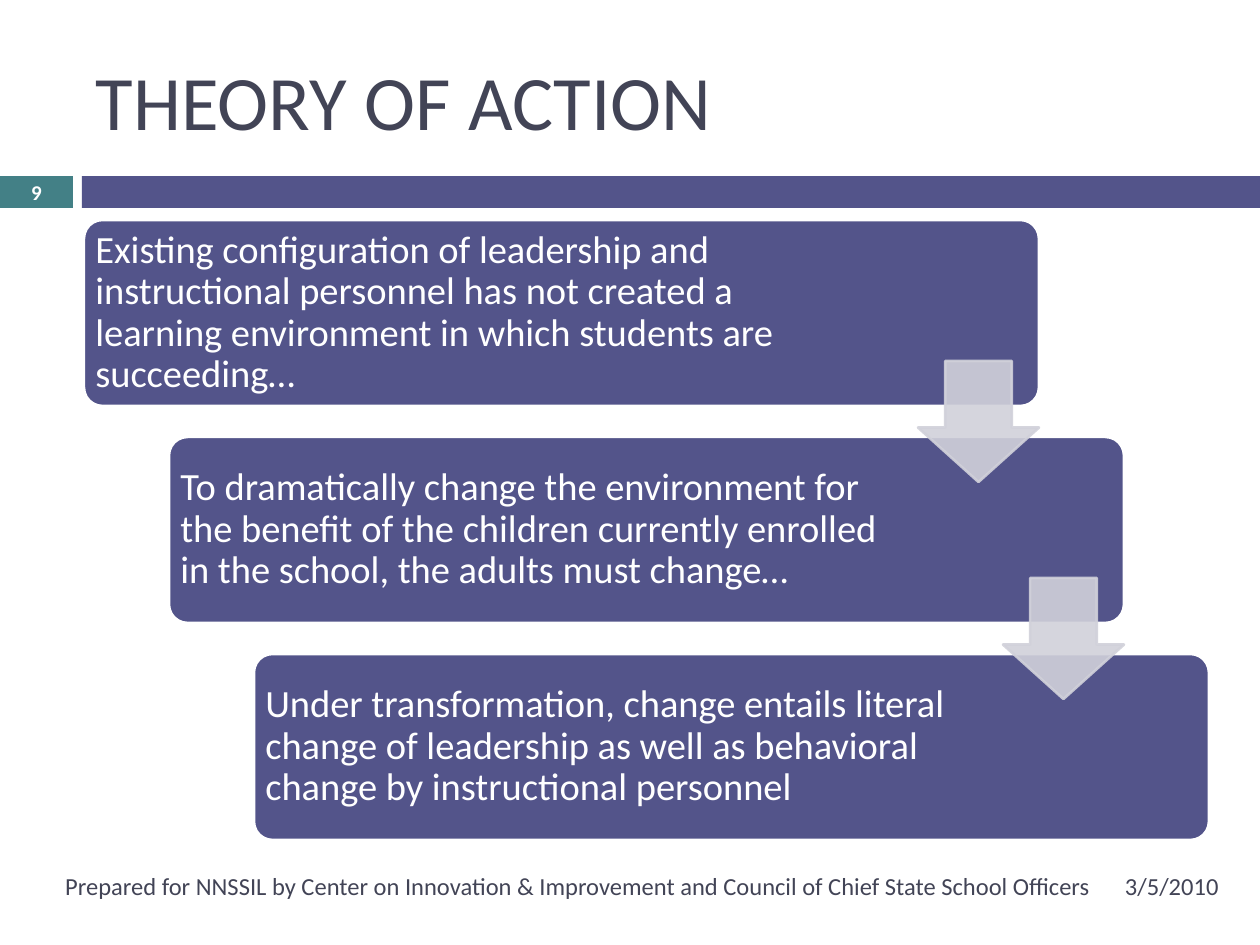
from dataclasses import dataclass

from lxml.etree import SubElement
from pptx import Presentation
from pptx.dml.color import RGBColor
from pptx.enum.shapes import MSO_SHAPE
from pptx.enum.text import MSO_ANCHOR, PP_ALIGN
from pptx.oxml.ns import qn
from pptx.util import Pt


@dataclass(frozen=True)
class Theme:
    font: str = "Calibri"
    ink: str = "424456"
    indigo: str = "53548A"
    teal: str = "438086"
    arrow: str = "D1D1DA"
    white: str = "FFFFFF"
    title_size: float = 44
    step_size: float = 22
    footer_size: float = 14
    number_size: float = 12


THEME = Theme()
EMU_PER_PX = 914400 / 126


def px(*lengths):
    return [round(length * EMU_PER_PX) for length in lengths]


def write(shape, text, size, color, align=PP_ALIGN.LEFT, bold=False, insets=(12, 6, 12, 6)):
    frame = shape.text_frame
    frame.word_wrap = True
    frame.vertical_anchor = MSO_ANCHOR.MIDDLE
    frame.margin_left, frame.margin_top, frame.margin_right, frame.margin_bottom = px(*insets)
    paragraph = frame.paragraphs[0]
    paragraph.alignment = align
    run = paragraph.add_run()
    run.text = text
    run.font.name = THEME.font
    run.font.size = Pt(size)
    run.font.bold = bold
    run.font.color.rgb = RGBColor.from_string(color)
    return paragraph


deck = Presentation()
deck.slide_width, deck.slide_height = px(1260, 945)
slide = deck.slides.add_slide(deck.slide_layouts[5])
shapes = slide.shapes

# Title
title = shapes.title
title.left, title.top, title.width, title.height = px(84, 32, 1124, 136)
write(title, "THEORY OF ACTION", THEME.title_size, THEME.ink)

# Band under the title, with the slide number at its left end
for left, width, color, number in ((0, 73, THEME.teal, "9"), (82, 1178, THEME.indigo, None)):
    band = shapes.add_shape(MSO_SHAPE.RECTANGLE, *px(left, 176, width, 32))
    band.shadow.inherit = False
    band.fill.solid()
    band.fill.fore_color.rgb = RGBColor.from_string(color)
    band.line.fill.background()
    if number:
        write(band, number, THEME.number_size, THEME.white, PP_ALIGN.CENTER, True, (0, 0, 0, 0))

# Footer and date
footers = (
    (42, 1061, PP_ALIGN.RIGHT, "Prepared for NNSSIL by Center on Innovation & Improvement "
                               "and Council of Chief State School Officers"),
    (1113, 136, PP_ALIGN.LEFT, "3/5/2010"),
)
for left, width, align, text in footers:
    footer = shapes.add_textbox(*px(left, 861, width, 50))
    write(footer, text, THEME.footer_size, THEME.ink, align)

# Steps descending to the right
steps = (
    "Existing configuration of leadership and instructional personnel has not created "
    "a learning environment in which students are succeeding…",
    "To dramatically change the environment for the benefit of the children currently "
    "enrolled in the school, the adults must change…",
    "Under transformation, change entails literal change of leadership as well as "
    "behavioral change by instructional personnel",
)
origins = [(84 + 85 * i, 220 + 217 * i) for i in range(len(steps))]
for (left, top), text in zip(origins, steps):
    step = shapes.add_shape(MSO_SHAPE.ROUNDED_RECTANGLE, *px(left, top, 955, 186))
    step.adjustments[0] = 0.1
    step.shadow.inherit = False
    step.fill.solid()
    step.fill.fore_color.rgb = RGBColor.from_string(THEME.indigo)
    step.line.color.rgb = RGBColor.from_string(THEME.white)
    step.line.width = Pt(1.5)
    paragraph = write(step, text, THEME.step_size, THEME.white, insets=(6, 6, 211, 6))
    paragraph.line_spacing = 0.9

# Translucent arrows from each step to the next
for left, top in origins[:-1]:
    arrow = shapes.add_shape(MSO_SHAPE.DOWN_ARROW, *px(left + 834, top + 141, 121, 121))
    # The preset lists the head length first, then the shaft width
    arrow.adjustments[0] = 0.55
    arrow.adjustments[1] = 0.45
    arrow.shadow.inherit = False
    arrow.fill.solid()
    arrow.fill.fore_color.rgb = RGBColor.from_string(THEME.arrow)
    arrow.line.color.rgb = RGBColor.from_string(THEME.arrow)
    arrow.line.width = Pt(1.5)
    for color in arrow._element.spPr.iter(qn("a:srgbClr")):
        SubElement(color, qn("a:alpha")).set("val", "90000")

deck.save("out.pptx")
